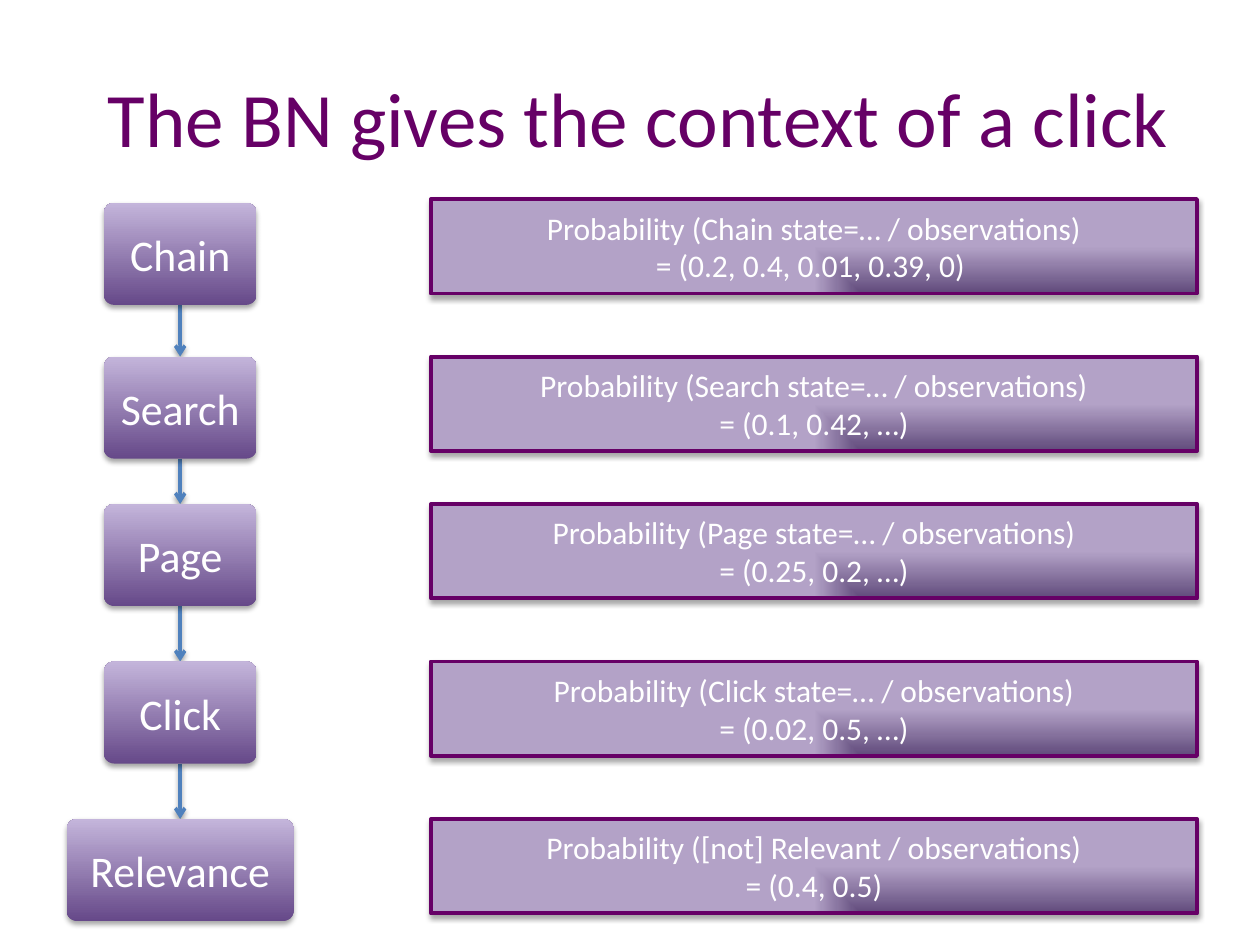
import pptx
import pptx.dml.color
import pptx.enum.shapes
import pptx.enum.text
import pptx.oxml
import pptx.oxml.ns
import pptx.util
from pptx.util import Inches

PURPLE = pptx.dml.color.RGBColor(0x66, 0x00, 0x66)
WHITE = pptx.dml.color.RGBColor(0xFF, 0xFF, 0xFF)
BLUE = pptx.dml.color.RGBColor(0x4F, 0x81, 0xBD)
BOX_DARK = pptx.dml.color.RGBColor(0x60, 0x4A, 0x7B)
BOX_LIGHT = pptx.dml.color.RGBColor(0xB3, 0xA2, 0xC7)
NODE_DARK = pptx.dml.color.RGBColor(0x66, 0x49, 0x89)
NODE_LIGHT = pptx.dml.color.RGBColor(0xC4, 0xB5, 0xDB)

UPWARD = '<a:lin ang="16200000" scaled="0"/>'
FROM_CORNER = '<a:path path="rect"><a:fillToRect l="100000" t="100000"/></a:path>'

NODE_CENTER = 1.43
NODE_HEIGHT = 0.81
STEPS = [
    ("Chain", 1.21, 1.61, 1.58,
     "Probability (Chain state=… / observations)\n= (0.2, 0.4, 0.01, 0.39, 0) "),
    ("Search", 1.21, 2.83, 2.83,
     "Probability (Search state=… / observations)\n= (0.1, 0.42, …)"),
    ("Page", 1.21, 4, 4,
     "Probability (Page state=… / observations)\n= (0.25, 0.2, …)"),
    ("Click", 1.21, 5.25, 5.25,
     "Probability (Click state=… / observations)\n= (0.02, 0.5, …)"),
    ("Relevance", 1.8, 6.5, 6.5,
     "Probability ([not] Relevant / observations)\n= (0.4, 0.5)"),
]


def make_element(tag, content, attributes=""):
    namespace = pptx.oxml.ns.nsdecls("a")
    return pptx.oxml.parse_xml(f"<a:{tag} {namespace} {attributes}>{content}</a:{tag}>")


def set_gradient(shape, dark, light, direction):
    stops = "".join(
        f'<a:gs pos="{position}"><a:srgbClr val="{color}"/></a:gs>'
        for position, color in ((0, dark), (100000, light))
    )
    gradient = make_element(
        "gradFill", f"<a:gsLst>{stops}</a:gsLst>{direction}", 'rotWithShape="1"')
    shape.element.spPr.find(pptx.oxml.ns.qn("a:prstGeom")).addnext(gradient)


def add_shadow(shape, opacity, distance):
    color = f'<a:srgbClr val="000000"><a:alpha val="{opacity * 1000}"/></a:srgbClr>'
    shadow = (f'<a:outerShdw blurRad="{pptx.util.Pt(3.1)}" dist="{pptx.util.Pt(distance)}" '
              f'dir="5400000" rotWithShape="0">{color}</a:outerShdw>')
    shape.element.spPr.append(make_element("effectLst", shadow))


def write_text(shape, text, size, color, wrap=True):
    frame = shape.text_frame
    frame.word_wrap = wrap
    frame.vertical_anchor = pptx.enum.text.MSO_ANCHOR.MIDDLE
    paragraph = frame.paragraphs[0]
    paragraph.text = text
    paragraph.alignment = pptx.enum.text.PP_ALIGN.CENTER
    paragraph.font.name = "Calibri"
    paragraph.font.size = pptx.util.Pt(size)
    paragraph.font.color.rgb = color


def add_title(slide, text):
    title = slide.shapes.add_textbox(Inches(0.5), Inches(0.3), Inches(9), Inches(1.25))
    write_text(title, text, 44, PURPLE)


def add_probability(slide, text, top):
    box = slide.shapes.add_shape(
        pptx.enum.shapes.MSO_SHAPE.RECTANGLE,
        Inches(3.42), Inches(top), Inches(6.08), Inches(0.75))
    set_gradient(box, BOX_DARK, BOX_LIGHT, FROM_CORNER)
    box.line.color.rgb = PURPLE
    box.line.width = pptx.util.Pt(2.25)
    add_shadow(box, 35, 1.8)
    write_text(box, text, 18, WHITE)


def add_node(slide, text, width, top):
    node = slide.shapes.add_shape(
        pptx.enum.shapes.MSO_SHAPE.ROUNDED_RECTANGLE,
        Inches(NODE_CENTER - width / 2), Inches(top), Inches(width), Inches(NODE_HEIGHT))
    node.adjustments[0] = 0.1
    set_gradient(node, NODE_DARK, NODE_LIGHT, UPWARD)
    node.line.fill.background()
    add_shadow(node, 35, 1.8)
    write_text(node, text, 25, WHITE, wrap=False)
    return node


def add_arrow(slide, upper, lower):
    arrow = slide.shapes.add_connector(
        pptx.enum.shapes.MSO_CONNECTOR.STRAIGHT, 0, 0, 0, 0)
    arrow.begin_connect(upper, 2)
    arrow.end_connect(lower, 0)
    arrow.line.color.rgb = BLUE
    arrow.line.width = pptx.util.Pt(2)
    arrow.line._get_or_add_ln().append(make_element("tailEnd", "", 'type="arrow"'))
    add_shadow(arrow, 38, 1.6)
    upper.element.addprevious(arrow.element)


def main():
    presentation = pptx.Presentation()
    presentation.slide_width = Inches(10)
    presentation.slide_height = Inches(7.5)
    slide = presentation.slides.add_slide(presentation.slide_layouts[6])
    add_title(slide, " The BN gives the context of a click")
    nodes = []
    for name, width, node_top, box_top, probability in STEPS:
        add_probability(slide, probability, box_top)
        nodes.append(add_node(slide, name, width, node_top))
    for upper, lower in zip(nodes, nodes[1:]):
        add_arrow(slide, upper, lower)
    presentation.save("out.pptx")


if __name__ == "__main__":
    main()
